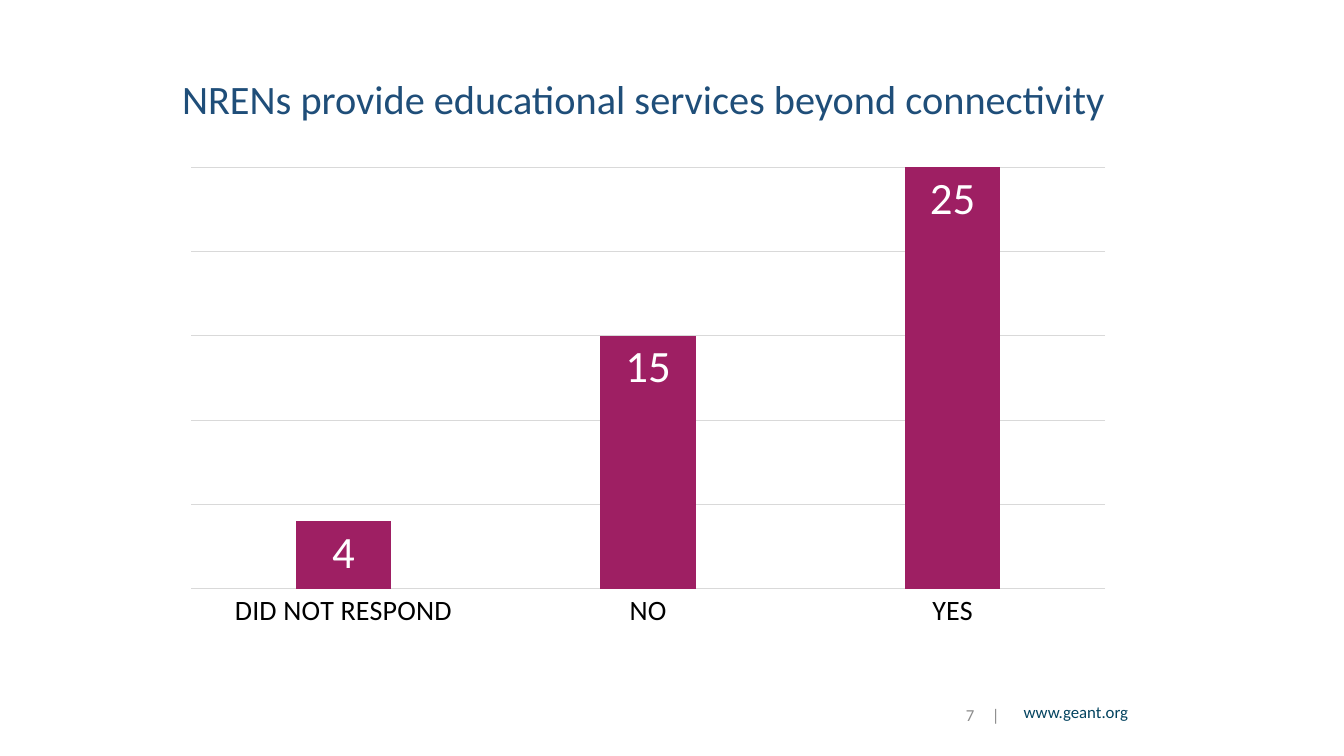
"""Build a slide with a column chart of NRENs offering educational services."""
import pptx
import pptx.chart.data
import pptx.dml.color
import pptx.enum.chart
import pptx.enum.text
import pptx.oxml
import pptx.oxml.ns
import pptx.util

Pt = pptx.util.Pt
RGBColor = pptx.dml.color.RGBColor
ALIGN = pptx.enum.text.PP_ALIGN
ANCHOR = pptx.enum.text.MSO_ANCHOR

NAVY = RGBColor(0x1F, 0x4E, 0x79)
TEAL = RGBColor(0x03, 0x43, 0x5F)
GRAY = RGBColor(0x8C, 0x8C, 0x8C)
GRID = RGBColor(0xD9, 0xD9, 0xD9)
PLUM = RGBColor(0x9E, 0x1F, 0x63)
BLACK = RGBColor(0, 0, 0)
WHITE = RGBColor(0xFF, 0xFF, 0xFF)


class SlideBuilder:
    def __init__(self, page, font_name="Calibri"):
        self.page = page
        self.font_name = font_name

    def style_font(self, font, size, color):
        font.name = self.font_name
        font.size = Pt(size)
        font.color.rgb = color

    def style_line(self, line):
        line.color.rgb = GRID
        line.width = Pt(0.75)

    def add_text(self, text, bounds, size, color, align=ALIGN.RIGHT,
                 anchor=ANCHOR.MIDDLE, spacing=1.0):
        box = self.page.shapes.add_textbox(*map(Pt, bounds))
        box.text_frame.word_wrap = True
        box.text_frame.vertical_anchor = anchor
        para = box.text_frame.paragraphs[0]
        para.text = text
        para.alignment = align
        para.line_spacing = spacing
        self.style_font(para.font, size, color)

    def add_columns(self, bounds, categories, values):
        data = pptx.chart.data.CategoryChartData()
        data.categories = categories
        data.add_series("Series 1", values)
        kind = pptx.enum.chart.XL_CHART_TYPE.COLUMN_CLUSTERED
        chart = self.page.shapes.add_chart(kind, *map(Pt, bounds), data).chart
        chart.has_legend = False
        chart.has_title = False
        self.style_font(chart.font, 10, BLACK)

        category_axis = chart.category_axis
        category_axis.major_tick_mark = pptx.enum.chart.XL_TICK_MARK.NONE
        self.style_font(category_axis.tick_labels.font, 20, BLACK)
        self.style_line(category_axis.format.line)

        value_axis = chart.value_axis
        value_axis.visible = False
        value_axis.minimum_scale = 0
        value_axis.maximum_scale = 25
        value_axis.major_unit = 5
        value_axis.has_major_gridlines = True
        self.style_line(value_axis.major_gridlines.format.line)

        plot = chart.plots[0]
        plot.vary_by_categories = False
        plot.gap_width = 219
        plot.overlap = -27
        fill = plot.series[0].format.fill
        fill.solid()
        fill.fore_color.rgb = PLUM
        labels = plot.series[0].data_labels
        labels.show_value = True
        labels.position = pptx.enum.chart.XL_LABEL_POSITION.INSIDE_END
        self.style_font(labels.font, 32, WHITE)
        self.place_plot(chart, x=0.02, y=0.02, w=0.96, h=0.88)

    def place_plot(self, chart, **fractions):
        area = chart.element.find(".//" + pptx.oxml.ns.qn("c:plotArea"))
        for layout in area.findall(pptx.oxml.ns.qn("c:layout")):
            area.remove(layout)
        sizes = "".join(f'<c:{key} val="{value}"/>' for key, value in fractions.items())
        area.insert(0, pptx.oxml.parse_xml(
            f'<c:layout {pptx.oxml.ns.nsdecls("c")}><c:manualLayout>'
            '<c:layoutTarget val="inner"/><c:xMode val="edge"/><c:yMode val="edge"/>'
            f'{sizes}</c:manualLayout></c:layout>'))


def main():
    deck = pptx.Presentation()
    deck.slide_width = Pt(960)
    deck.slide_height = Pt(540)
    builder = SlideBuilder(deck.slides.add_slide(deck.slide_layouts[6]))
    builder.add_text("NRENs provide educational services beyond connectivity",
                     (123, 55.5, 779, 34), 28.8, NAVY, align=ALIGN.LEFT, spacing=0.9)
    builder.add_columns((123, 112.5, 680, 342.5),
                        ("DID NOT RESPOND", "NO", "YES"), (4, 15, 25))
    builder.add_text("7", (669, 497.5, 34, 26), 12, GRAY)
    builder.add_text("|", (687, 497.5, 34, 26), 12, GRAY)
    builder.add_text("www.geant.org", (692, 497.5, 121, 26), 12, TEAL, anchor=ANCHOR.TOP)
    deck.save("out.pptx")


if __name__ == "__main__":
    main()
